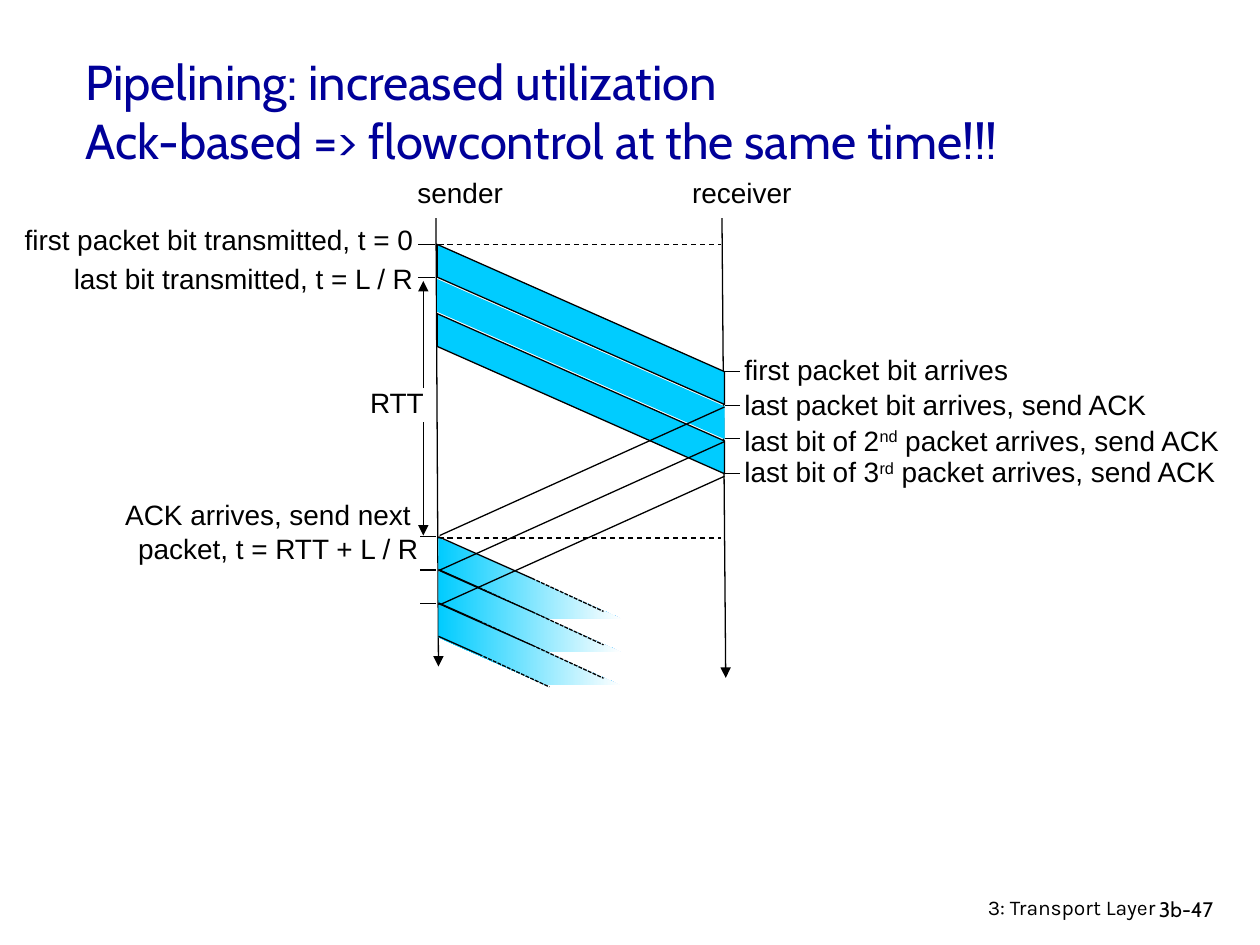
from lxml.etree import SubElement
from pptx import Presentation
from pptx.dml.color import RGBColor
from pptx.enum.dml import MSO_LINE
from pptx.enum.shapes import MSO_CONNECTOR, MSO_SHAPE
from pptx.enum.text import MSO_ANCHOR, PP_ALIGN
from pptx.oxml.ns import qn
from pptx.util import Inches, Pt

COLORS = {"ink": "000000", "title": "000099", "packet": "00CCFF", "paper": "FFFFFF"}
BODY = {"name": "Arial", "size": Pt(16)}
TITLE = {"name": "Cabin", "size": Pt(28)}
FOOTER = {"name": "Karla", "size": Pt(12)}
NUMBER = {"name": "Cabin", "size": Pt(12)}
LEFT, RIGHT = PP_ALIGN.LEFT, PP_ALIGN.RIGHT


def rgb(key):
    return RGBColor.from_string(COLORS[key])


def add_text(s, box, paragraphs, fmt=BODY, align=LEFT, color="ink",
             anchor=MSO_ANCHOR.TOP, fill=None):
    dims = [Inches(v) for v in box]
    if fill:
        sp = s.shapes.add_shape(MSO_SHAPE.RECTANGLE, *dims)
        sp.shadow.inherit = False
        sp.fill.solid()
        sp.fill.fore_color.rgb = rgb(fill)
        sp.line.fill.background()
    else:
        sp = s.shapes.add_textbox(*dims)
    tf = sp.text_frame
    tf.word_wrap = True
    tf.vertical_anchor = anchor
    for i, runs in enumerate(paragraphs):
        p = tf.add_paragraph() if i else tf.paragraphs[0]
        p.alignment = align
        for j, text in enumerate(runs):
            if text == "\n":
                p.add_line_break()
                continue
            r = p.add_run()
            r.text = text
            for name, value in fmt.items():
                setattr(r.font, name, value)
            r.font.color.rgb = rgb(color)
            if text in ("nd", "rd"):
                r._r.get_or_add_rPr().set("baseline", "30000")


def add_line(shapes, start, end, dash=None, arrow=False):
    ends = [Inches(v) for v in (*start, *end)]
    c = shapes.add_connector(MSO_CONNECTOR.STRAIGHT, *ends)
    c.line.width = Pt(0.75)
    c.line.color.rgb = rgb("ink")
    if dash:
        c.line.dash_style = dash
    if arrow:
        SubElement(c.line._get_or_add_ln(), qn("a:tailEnd"), type="triangle")
    SubElement(c._element.spPr, qn("a:effectLst"))


def add_band(shapes, points, outlined=False, fading=False):
    start, *rest = [(Inches(x), Inches(y)) for x, y in points]
    fb = shapes.build_freeform(*start)
    fb.add_line_segments(rest, close=True)
    sp = fb.convert_to_shape()
    sp.shadow.inherit = False
    if fading:
        sp.fill.gradient()
        sp.fill.gradient_angle = 0
        for stop, key, pos in zip(sp.fill.gradient_stops, ("packet", "paper"), (0, 1)):
            stop.color.rgb = rgb(key)
            stop.position = pos
    else:
        sp.fill.solid()
        sp.fill.fore_color.rgb = rgb("packet")
    if outlined:
        sp.line.color.rgb = rgb("ink")
        sp.line.width = Pt(0.75)
    else:
        sp.line.fill.background()


def timelines(s, x, y, w):
    add_line(s.shapes, (x, y), (x + 0.02, y + 3.59), arrow=True)
    add_line(s.shapes, (x + w, y + 0.02), (x + w + 0.03, y + 3.68), arrow=True)
    for dx, label_w, text in ((-0.51, 1.14, "sender"), (1.71, 1.21, "receiver")):
        add_text(s, (x + dx, y - 0.36, label_w, 0.39), [[text]],
                 align=RIGHT, fill="paper")
    for top in (y + 0.24, y + 2.57):
        add_line(s.shapes, (x + 0.02, top), (x + w - 0.01, top), MSO_LINE.DASH)


def packets(s, x, y, w, drop=1.01, thick=0.26, pitch=0.275):
    for i, outlined in enumerate((True, False, True)):
        top = y + i * pitch
        add_band(s.shapes, [(x, top), (x + w, top + drop),
                            (x + w, top + drop + thick), (x, top + thick)], outlined)


def next_packet(s, x, y):
    shapes = s.shapes.add_group_shape().shapes
    add_line(shapes, (x - 0.02, y), (x - 0.15, y))
    add_band(shapes, [(x, y + 0.01), (x + 1.45, y + 0.65),
                      (x + 0.86, y + 0.65), (x, y + 0.27)], fading=True)
    for top, solid, end in ((y, 0.74, 1.31), (y + 0.26, 0.32, 0.88)):
        slope = 0.445
        middle = (x + solid, top + solid * slope)
        add_line(shapes, (x, top), middle)
        add_line(shapes, middle, (x + end, top + end * slope + 0.01), MSO_LINE.SQUARE_DOT)


def acks(s, x, y, w, pitch=0.275, rise=1.02):
    for i in range(3):
        top = y + i * pitch
        add_line(s.shapes, (x, top), (x + w, top - rise))


def sender_labels(s, x, y):
    add_text(s, (0, y - 0.22, x, 0.39), [["first packet bit transmitted, t = 0"]],
             align=RIGHT, fill="paper")
    add_text(s, (x - 3, y + 0.09, 3, 0.39), [["last bit transmitted, t = L / R"]],
             align=RIGHT)
    add_text(s, (x - 0.92, y + 1.07, 1.06, 0.37), [["RTT "]], align=RIGHT)
    add_text(s, (x - 2.84, y + 1.96, 2.88, 0.7),
             [["ACK arrives, send next "], ["packet, t = RTT + L / R"]], align=RIGHT)
    for top in (y, y + 0.26):
        add_line(s.shapes, (x + 0.07, top), (x - 0.06, top))
    for start, end in ((1.14, 0.29), (1.41, 2.31)):
        add_line(s.shapes, (x - 0.02, y + start), (x - 0.02, y + end), arrow=True)


def receiver_labels(s, x, y):
    rows = [
        (0, -0.2, ["first packet bit arrives"]),
        (0.27, 0.08, ["last packet bit arrives, send ACK"]),
        (0.53, 0.36, ["last bit of 2", "nd", " packet arrives, send ACK"]),
        (0.81, 0.61, ["last bit of 3", "rd", " packet arrives, send ACK"]),
    ]
    for tick, top, runs in rows:
        add_line(s.shapes, (x, y + tick), (x + 0.12, y + tick))
        add_text(s, (x + 0.06, y + top, 4.19, 0.42), [runs])


def frame(s):
    add_text(s, (0.58, 0.25, 9.15, 1.25),
             [["Pipelining: increased utilization", "\n",
               "Ack-based => flowcontrol at the same time!!!"]],
             TITLE, color="title", anchor=MSO_ANCHOR.MIDDLE)
    add_text(s, (6.1, 7.05, 3.17, 0.31), [["3: Transport Layer"]], FOOTER, RIGHT)
    add_text(s, (9.1, 7.07, 0.74, 0.3), [["3b-47"]], NUMBER)


def main():
    prs = Presentation()
    prs.slide_width, prs.slide_height = Inches(10), Inches(7.5)
    s = prs.slides.add_slide(prs.slide_layouts[6])
    frame(s)
    timelines(s, 3.46, 1.7, 2.27)
    packets(s, 3.47, 1.94, 2.28)
    for i in range(3):
        next_packet(s, 3.48, 4.26 + i * 0.265)
    acks(s, 3.49, 4.25, 2.26)
    sender_labels(s, 3.38, 1.94)
    receiver_labels(s, 5.75, 2.95)
    prs.save("out.pptx")


if __name__ == "__main__":
    main()
